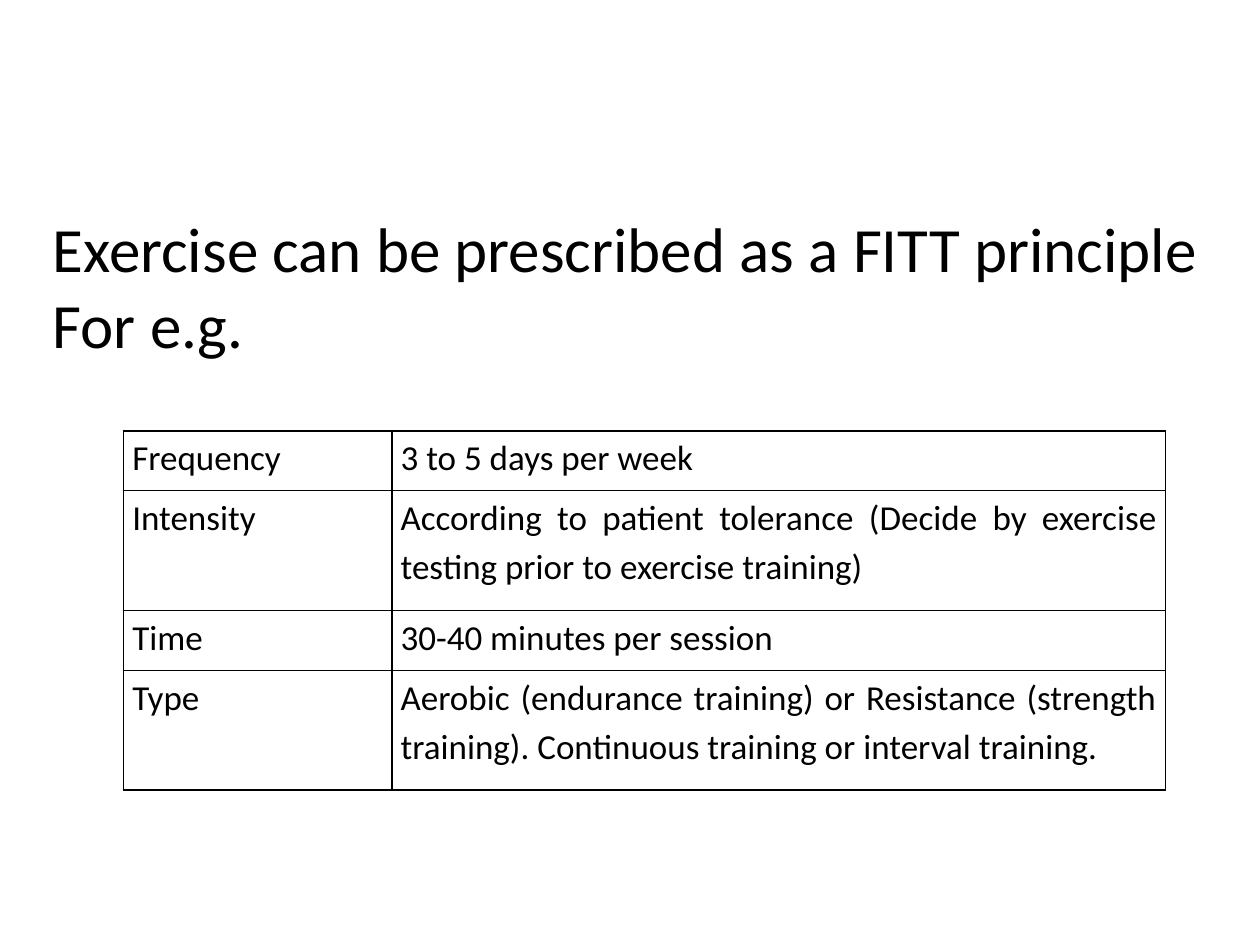
from lxml import etree
from pptx import Presentation
from pptx.dml.color import RGBColor
from pptx.enum.text import MSO_ANCHOR, MSO_AUTO_SIZE, PP_ALIGN
from pptx.oxml.ns import qn
from pptx.util import Inches, Pt

BLACK = RGBColor(0x00, 0x00, 0x00)
JUSTIFY = PP_ALIGN.JUSTIFY
TOP, MIDDLE = MSO_ANCHOR.TOP, MSO_ANCHOR.MIDDLE
FIT_SHAPE = MSO_AUTO_SIZE.SHAPE_TO_FIT_TEXT
BLANK_LAYOUT = 6

TITLE_LINES = ["Exercise can be prescribed as a FITT principle", "For e.g."]
FITT_ROWS = [
    ("Frequency", "3 to 5 days per week"),
    ("Intensity", "According to patient tolerance (Decide by exercise "
                  "testing prior to exercise training)"),
    ("Time", "30-40 minutes per session"),
    ("Type", "Aerobic (endurance training) or Resistance (strength training). "
             "Continuous training or interval training."),
]
COLUMN_WIDTHS = [2.13, 6.14]
ROW_HEIGHT = 0.475
ROW_LINES = [1, 2, 1, 2]


class SlideBuilder:
    font_name = "Calibri"
    color = BLACK
    border_width = Pt(1)
    cell_margin = Inches(0.07)

    def __init__(self, deck):
        self.page = deck.slides.add_slide(deck.slide_layouts[BLANK_LAYOUT])

    def style(self, para, size, line_spacing=1.0):
        para.alignment = JUSTIFY
        para.line_spacing = line_spacing
        para.font.name = self.font_name
        para.font.size = Pt(size)
        para.font.color.rgb = self.color

    def heading(self, lines, left, top, width, height, size):
        box = self.page.shapes.add_textbox(
            Inches(left), Inches(top), Inches(width), Inches(height))
        frame = box.text_frame
        frame.word_wrap = False
        frame.auto_size = FIT_SHAPE
        frame.vertical_anchor = MIDDLE
        frame.text = "\n".join(lines)
        for para in frame.paragraphs:
            self.style(para, size)

    def table(self, rows, left, top, widths, heights, size):
        table = self.page.shapes.add_table(
            len(rows), len(widths), Inches(left), Inches(top),
            Inches(sum(widths)), Inches(sum(heights))).table
        table.first_row = table.horz_banding = False
        for column, width in zip(table.columns, widths):
            column.width = Inches(width)
        for row, height, texts in zip(table.rows, heights, rows):
            row.height = Inches(height)
            for cell, text in zip(row.cells, texts):
                self.fill_cell(cell, text, size)

    def fill_cell(self, cell, text, size):
        cell.margin_left = cell.margin_right = self.cell_margin
        cell.margin_top = cell.margin_bottom = 0
        cell.vertical_anchor = TOP
        cell.text = text
        self.style(cell.text_frame.paragraphs[0], size, line_spacing=1.15)
        self.border(cell)
        cell.fill.background()

    def border(self, cell):
        """Draw a solid line on all four sides; call before setting the fill."""
        properties = cell._tc.get_or_add_tcPr()
        for side in ("a:lnL", "a:lnR", "a:lnT", "a:lnB"):
            line = etree.SubElement(properties, qn(side), w=str(self.border_width))
            solid = etree.SubElement(line, qn("a:solidFill"))
            etree.SubElement(solid, qn("a:srgbClr"), val=str(self.color))


def main():
    deck = Presentation()
    deck.slide_width, deck.slide_height = Inches(10), Inches(7.5)
    slide = SlideBuilder(deck)
    slide.table(FITT_ROWS, 0.98, 3.42, COLUMN_WIDTHS,
                [ROW_HEIGHT * lines for lines in ROW_LINES], size=20)
    slide.heading(TITLE_LINES, 0.32, 1.61, 9.37, 1.31, size=36)
    deck.save("out.pptx")


if __name__ == "__main__":
    main()
